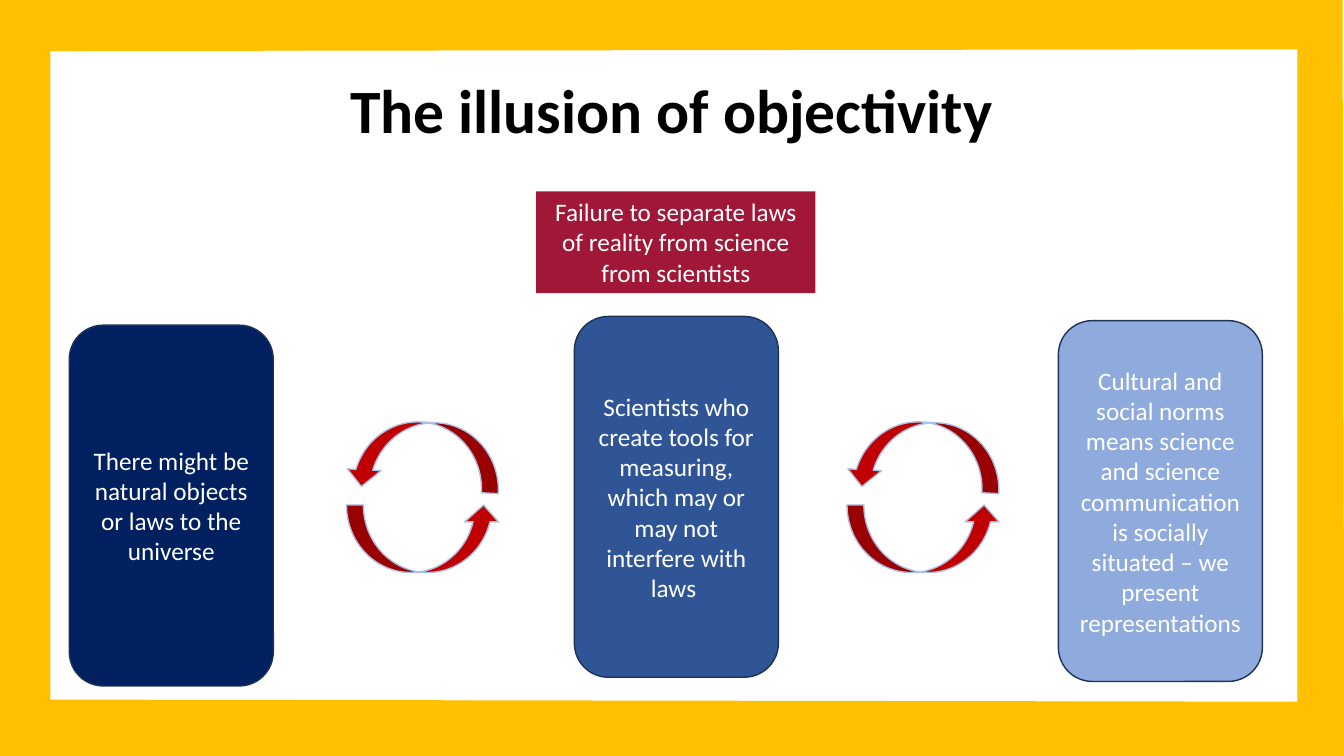
from dataclasses import dataclass

from pptx import Presentation
from pptx.dml.color import RGBColor
from pptx.enum.shapes import MSO_SHAPE
from pptx.enum.text import MSO_ANCHOR, MSO_AUTO_SIZE, PP_ALIGN
from pptx.util import Pt

RECTANGLE = MSO_SHAPE.RECTANGLE
ROUNDED = MSO_SHAPE.ROUNDED_RECTANGLE
CURVED_ARROW = MSO_SHAPE.CURVED_UP_ARROW
TOP, MIDDLE = MSO_ANCHOR.TOP, MSO_ANCHOR.MIDDLE
CENTER = PP_ALIGN.CENTER
NO_FIT, GROW = MSO_AUTO_SIZE.NONE, MSO_AUTO_SIZE.SHAPE_TO_FIT_TEXT
TITLE_ONLY = 5


@dataclass(frozen=True)
class Theme:
    font: str = "Calibri"
    title_size: float = 44
    body_size: float = 18
    background: str = "FFFFFF"
    title: str = "000000"
    label: str = "FFFFFF"
    frame: str = "FFC000"
    claim: str = "A11738"
    reality: str = "002060"
    scientists: str = "2F5597"
    culture: str = "8FAADC"
    card_line: str = "1E3256"
    arrow: str = "C00000"
    arrow_line: str = "ABC0E4"


def write(frame, text, *, size, color, font, bold=False, anchor=MIDDLE,
          fit=NO_FIT, line_spacing=None):
    frame.word_wrap = True
    frame.auto_size = fit
    frame.vertical_anchor = anchor
    paragraph = frame.paragraphs[0]
    paragraph.alignment = CENTER
    if line_spacing:
        paragraph.line_spacing = line_spacing
    run = paragraph.add_run()
    run.text = text
    run.font.name = font
    run.font.size = Pt(size)
    run.font.bold = bold
    run.font.color.rgb = RGBColor.from_string(color)


class SlideBuilder:
    def __init__(self, slide, theme):
        self.slide = slide
        self.theme = theme
        background = slide.background.fill
        background.solid()
        background.fore_color.rgb = RGBColor.from_string(theme.background)

    def paint(self, shape, fill, line=None):
        shape.shadow.inherit = False
        shape.fill.solid()
        shape.fill.fore_color.rgb = RGBColor.from_string(fill)
        if line:
            shape.line.color.rgb = RGBColor.from_string(line)
            shape.line.width = Pt(1)
        else:
            shape.line.fill.background()

    def title(self, text, left, top, width, height):
        title = self.slide.shapes.title
        title.left, title.top = Pt(left), Pt(top)
        title.width, title.height = Pt(width), Pt(height)
        write(title.text_frame, text, size=self.theme.title_size, bold=True,
              color=self.theme.title, font=self.theme.font, line_spacing=0.9)

    def border(self, outer, inner):
        """Draw a filled band between two outlines."""
        outer, inner = ([(Pt(x), Pt(y)) for x, y in outline]
                        for outline in (outer, inner))
        builder = self.slide.shapes.build_freeform(*outer[0])
        builder.add_line_segments(outer[1:], close=True)
        builder.move_to(*inner[0])
        builder.add_line_segments(inner[1:], close=True)
        self.paint(builder.convert_to_shape(), self.theme.frame, self.theme.frame)

    def shape(self, kind, left, top, width, height, fill, line=None):
        shape = self.slide.shapes.add_shape(
            kind, Pt(left), Pt(top), Pt(width), Pt(height))
        self.paint(shape, fill, line)
        return shape

    def box(self, kind, text, *place, fill, line=None, anchor=MIDDLE, fit=NO_FIT):
        box = self.shape(kind, *place, fill, line)
        write(box.text_frame, text, size=self.theme.body_size,
              color=self.theme.label, font=self.theme.font,
              anchor=anchor, fit=fit)

    def cycle(self, left):
        """Draw two curved arrows that chase each other in a ring."""
        for shift, top, rotation in ((0.25, 360.75, 0), (0, 301.5, 183)):
            arrow = self.shape(CURVED_ARROW, left + shift, top, 110, 48.25,
                               self.theme.arrow, self.theme.arrow_line)
            arrow.rotation = rotation


def main():
    theme = Theme()
    deck = Presentation()
    deck.slide_width, deck.slide_height = Pt(960), Pt(540)
    slide = SlideBuilder(
        deck.slides.add_slide(deck.slide_layouts[TITLE_ONLY]), theme)

    slide.title("The illusion of objectivity", 66, 28.75, 828, 104.4)
    slide.border(
        outer=[(0.5, 0.5), (958.5, 0), (959.75, 543), (0.5, 543)],
        inner=[(35.5, 36), (35.5, 500.25), (927.25, 501.75), (927.25, 34.75)])
    slide.box(RECTANGLE,
              "Failure to separate laws of reality from science from scientists",
              383, 136.75, 199.5, 72.7, fill=theme.claim, anchor=TOP, fit=GROW)

    cards = (
        (49.5, 232.25, theme.reality,
         "There might be natural objects or laws to the universe"),
        (410.25, 226, theme.scientists,
         "Scientists who create tools for measuring, which may or may not "
         "interfere with laws "),
        (756, 229, theme.culture,
         "Cultural and social norms means science and science communication "
         "is socially situated – we present representations"),
    )
    for left, top, fill, text in cards:
        slide.box(ROUNDED, text, left, top, 145.75, 257.75,
                  fill=fill, line=theme.card_line)

    for left in (247.25, 604.75):
        slide.cycle(left)

    deck.save("out.pptx")


if __name__ == "__main__":
    main()
